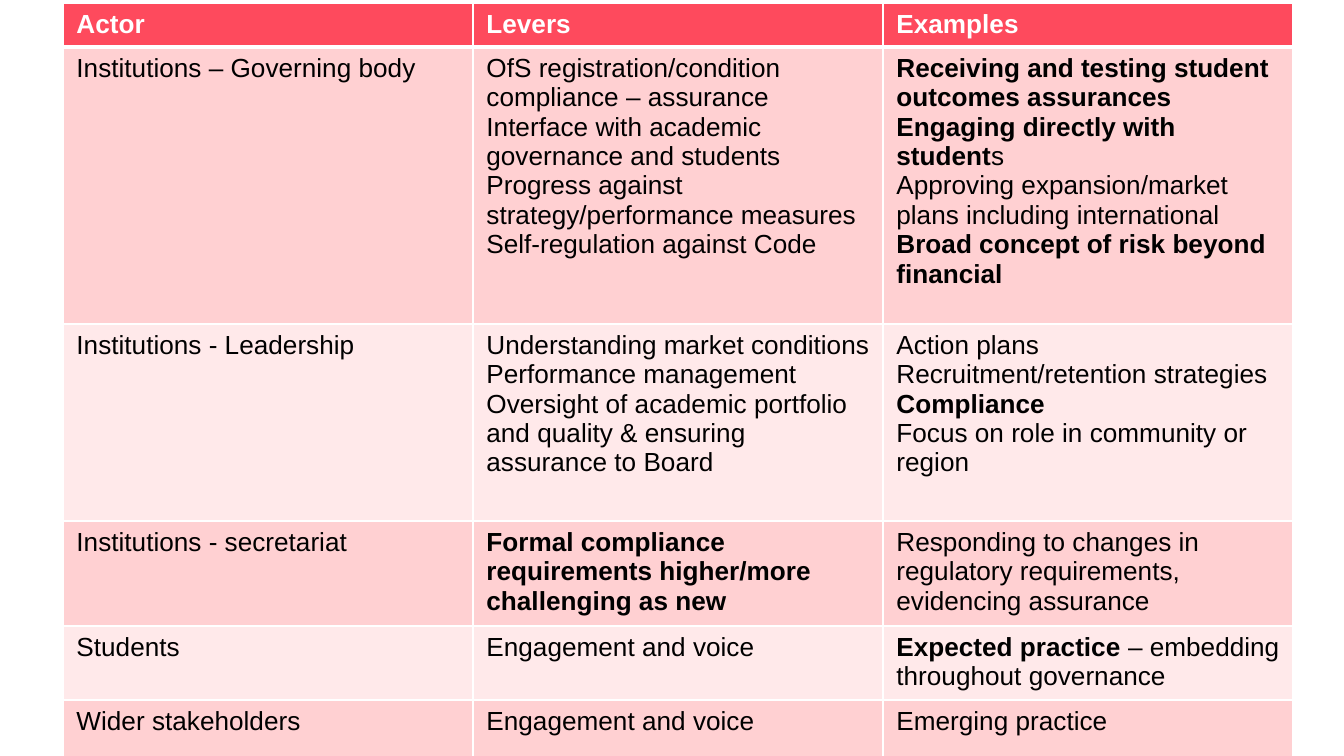
from lxml import etree
from pptx import Presentation
from pptx import util as u
from pptx.dml.color import RGBColor
from pptx.oxml import ns

PX = 914400 / 134.4
LEFT, TOP, COL_WIDTH = 63, 3, 410
ROW_HEIGHTS = [44, 277, 197, 105, 74, 73]
WHITE, BLACK, HEADER, DARK_BAND, LIGHT_BAND = "FFFFFF", "000000", "FE4A5D", "FFD0D2", "FFE9EA"

# Text between asterisks is bold; each line is a paragraph.
ROWS = [
    ["*Actor*", "*Levers*", "*Examples*"],
    ["Institutions – Governing body",
     "OfS registration/condition compliance – assurance\n"
     "Interface with academic governance and students\n"
     "Progress against strategy/performance measures\n"
     "Self-regulation against Code",
     "*Receiving and testing student outcomes assurances*\n"
     "*Engaging directly with student*s\n"
     "Approving expansion/market plans including international\n"
     "*Broad concept of risk beyond financial*"],
    ["Institutions - Leadership",
     "Understanding market conditions\n"
     "Performance management\n"
     "Oversight of academic portfolio and quality & ensuring assurance to Board",
     "Action plans\n"
     "Recruitment/retention strategies\n"
     "*Compliance*\n"
     "Focus on role in community or region"],
    ["Institutions - secretariat",
     "*Formal compliance requirements higher/more challenging as new*",
     "Responding to changes in regulatory requirements, evidencing assurance"],
    ["Students", "Engagement and voice",
     "*Expected practice *– embedding throughout governance"],
    ["Wider stakeholders", "Engagement and voice", "Emerging practice"],
]


def px(n):
    """Turn pixels into EMU."""
    return u.Emu(round(n * PX))


def rgb(color):
    """Turn a hex string into a colour."""
    return RGBColor.from_string(color)


def add_borders(cell, widths):
    """Draw white cell borders, with widths in points by side."""
    tcPr = cell._tc.get_or_add_tcPr()
    for side, width in widths.items():
        ln = etree.SubElement(tcPr, ns.qn(f"a:ln{side}"), w=str(u.Pt(width)))
        fill = etree.SubElement(ln, ns.qn("a:solidFill"))
        etree.SubElement(fill, ns.qn("a:srgbClr"), val=WHITE)


def write_text(tf, content, color):
    """Write paragraphs, with bold runs between asterisks."""
    for i, line in enumerate(content.split("\n")):
        p = tf.paragraphs[0] if i == 0 else tf.add_paragraph()
        for j, part in enumerate(line.split("*")):
            if not part:
                continue
            r = p.add_run()
            r.text = part
            font = {"name": "Arial", "size": u.Pt(14), "bold": j % 2 == 1}
            for name, value in font.items():
                setattr(r.font, name, value)
            r.font.color.rgb = rgb(color)


def format_cell(cell, row, content):
    """Give a cell its borders, band fill and text."""
    add_borders(cell, {"L": 1, "R": 1, "T": 3 if row == 1 else 1, "B": 3 if row == 0 else 1})
    cell.fill.solid()
    band = DARK_BAND if row % 2 else LIGHT_BAND
    cell.fill.fore_color.rgb = rgb(band if row else HEADER)
    write_text(cell.text_frame, content, BLACK if row else WHITE)


def add_actor_table(s):
    """Add the table of actors, levers and examples."""
    n_cols = len(ROWS[0])
    frame = s.shapes.add_table(len(ROWS), n_cols, px(LEFT), px(TOP),
                               px(COL_WIDTH * n_cols), px(sum(ROW_HEIGHTS)))
    table = frame.table
    for col in table.columns:
        col.width = px(COL_WIDTH)
    for i, (height, contents) in enumerate(zip(ROW_HEIGHTS, ROWS)):
        table.rows[i].height = px(height)
        for j, content in enumerate(contents):
            format_cell(table.cell(i, j), i, content)


def main():
    """Build the slide and save it."""
    prs = Presentation()
    prs.slide_width, prs.slide_height = px(1344), px(756)
    s = prs.slides.add_slide(prs.slide_layouts[6])
    add_actor_table(s)
    prs.save("out.pptx")


if __name__ == "__main__":
    main()
